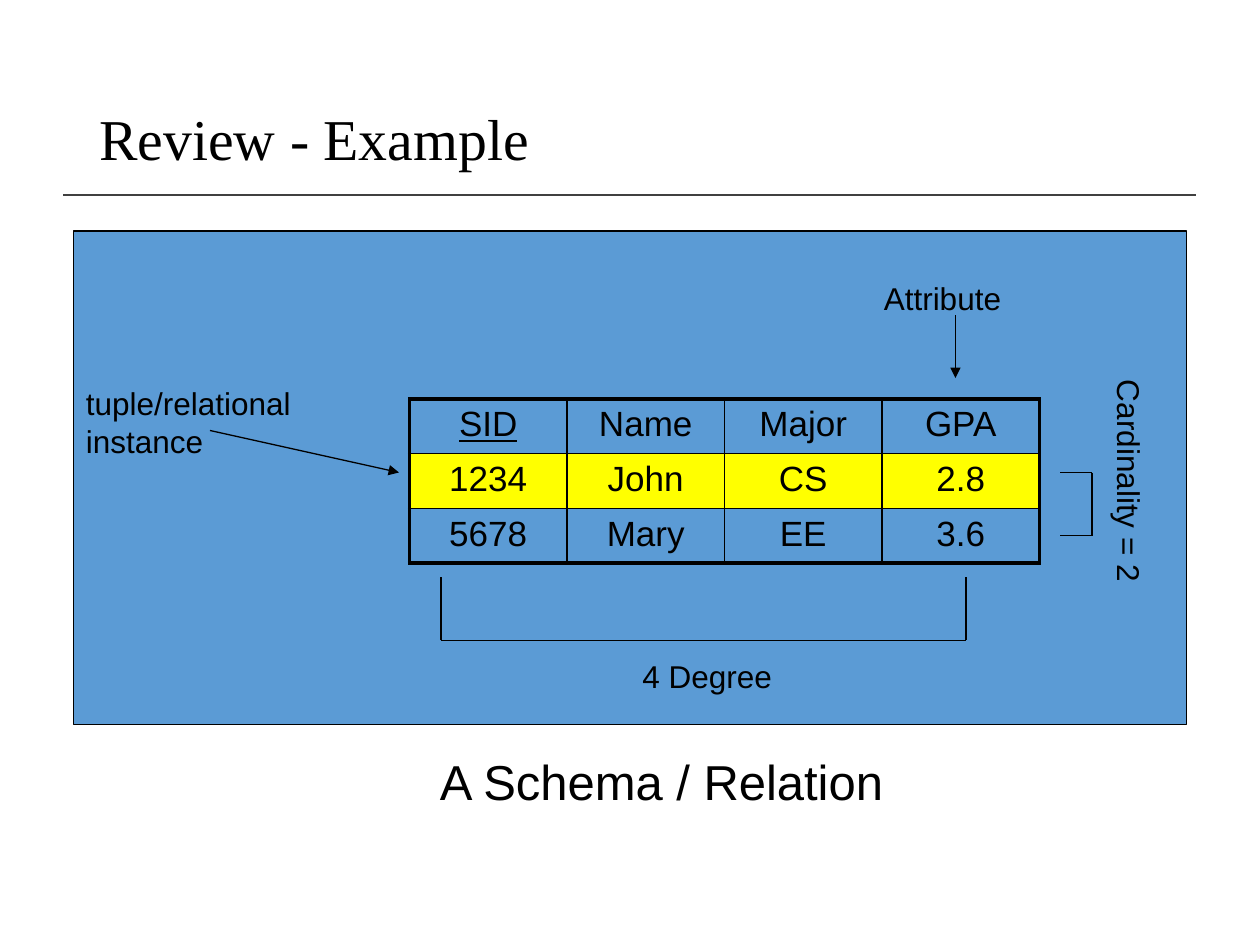
from dataclasses import dataclass

import lxml.etree
import pptx
import pptx.dml.color
import pptx.enum.shapes
import pptx.enum.text
import pptx.oxml.ns
import pptx.util

# The slide is a grid of 120 columns by 90 rows, twelve to the inch.
GRID_PER_INCH = 12
BLACK, BLUE, YELLOW, GRAY = "000000", "5B9BD5", "FFFF00", "404040"
ALIGN = pptx.enum.text.PP_ALIGN
ANCHOR = pptx.enum.text.MSO_ANCHOR


@dataclass(frozen=True)
class Box:
    column: float
    row: float
    columns: float
    rows: float

    def lengths(self) -> list[int]:
        return [grid(n) for n in (self.column, self.row, self.columns, self.rows)]


@dataclass(frozen=True)
class Label:
    text: str
    box: Box
    size: float = 18
    align: ALIGN = ALIGN.LEFT
    direction: str = "horz"


@dataclass(frozen=True)
class Path:
    """A chain of straight lines through grid points."""
    points: tuple
    arrow: bool = False
    color: str = BLACK
    width: float = 0.75


def grid(count: float) -> int:
    return pptx.util.Inches(count / GRID_PER_INCH)


def rgb(color: str) -> pptx.dml.color.RGBColor:
    return pptx.dml.color.RGBColor.from_string(color)


def add_element(parent, tag: str, **attributes: str):
    return lxml.etree.SubElement(parent, pptx.oxml.ns.qn(tag), attributes)


def write_text(frame, text: str, *, size: float, font: str = "Arial",
               align: ALIGN = ALIGN.LEFT, underline: bool = False,
               line_spacing: float = 1.0) -> None:
    paragraph = frame.paragraphs[0]
    paragraph.alignment = align
    paragraph.line_spacing = line_spacing
    run = paragraph.add_run()
    run.text = text
    run.font.name = font
    run.font.size = pptx.util.Pt(size)
    run.font.underline = underline
    run.font.color.rgb = rgb(BLACK)


def draw_title(slide, text: str, box: Box) -> None:
    frame = slide.shapes.add_textbox(*box.lengths()).text_frame
    frame.word_wrap = True
    frame.vertical_anchor = ANCHOR.MIDDLE
    write_text(frame, text, size=33, font="Times New Roman", line_spacing=0.9)


def draw_label(slide, label: Label) -> None:
    frame = slide.shapes.add_textbox(*label.box.lengths()).text_frame
    frame.word_wrap = True
    frame.auto_size = pptx.enum.text.MSO_AUTO_SIZE.SHAPE_TO_FIT_TEXT
    frame._txBody.bodyPr.set("vert", label.direction)
    write_text(frame, label.text, size=label.size, align=label.align)


def draw_panel(slide, box: Box) -> None:
    panel = slide.shapes.add_shape(
        pptx.enum.shapes.MSO_SHAPE.RECTANGLE, *box.lengths())
    panel.shadow.inherit = False
    panel.fill.solid()
    panel.fill.fore_color.rgb = rgb(BLUE)
    panel.line.color.rgb = rgb(BLACK)
    panel.line.width = pptx.util.Pt(0.75)


def draw_path(slide, path: Path) -> None:
    for start, end in zip(path.points, path.points[1:]):
        connector = slide.shapes.add_connector(
            pptx.enum.shapes.MSO_CONNECTOR.STRAIGHT,
            *(grid(n) for n in (*start, *end)))
        connector.line.color.rgb = rgb(path.color)
        connector.line.width = pptx.util.Pt(path.width)
        if path.arrow:
            add_element(connector.line._get_or_add_ln(), "a:tailEnd", type="triangle")
        add_element(connector._element.spPr, "a:effectLst")


def draw_border(cell, side: str, width: float) -> None:
    line = add_element(cell._tc.get_or_add_tcPr(), f"a:ln{side}",
                       w=str(pptx.util.Pt(width)))
    add_element(add_element(line, "a:solidFill"), "a:srgbClr", val=BLACK)


def draw_relation(slide, rows: list[list[str]], box: Box) -> None:
    row_count, column_count = len(rows), len(rows[0])
    table = slide.shapes.add_table(row_count, column_count, *box.lengths()).table
    table.first_row = table.horz_banding = False
    for r, values in enumerate(rows):
        for c, value in enumerate(values):
            cell = table.cell(r, c)
            # Thick outer frame, thin inner lines
            outer = {"L": c == 0, "R": c == column_count - 1,
                     "T": r == 0, "B": r == row_count - 1}
            for side, is_outer in outer.items():
                draw_border(cell, side, 2.25 if is_outer else 1)
            # The sample tuple is highlighted
            if r == 1:
                cell.fill.solid()
                cell.fill.fore_color.rgb = rgb(YELLOW)
            else:
                cell.fill.background()
            # The key attribute is underlined
            write_text(cell.text_frame, value, size=20, align=ALIGN.CENTER,
                       underline=value == "SID")


RELATION = [
    ["SID", "Name", "Major", "GPA"],
    ["1234", "John", "CS", "2.8"],
    ["5678", "Mary", "EE", "3.6"],
]
TITLE_RULE = Path(((6, 18.6), (113.9, 18.6)), color=GRAY, width=1)
PATHS = [
    Path(((20, 41), (38, 45)), arrow=True),               # tuple
    Path(((91, 30), (91, 36)), arrow=True),               # attribute
    Path(((42, 55), (42, 61), (92, 61), (92, 55))),       # degree bracket
    Path(((101, 45), (104, 45), (104, 51), (101, 51))),   # cardinality bracket
]
LABELS = [
    Label("tuple/relational instance", Box(7, 36, 25, 8.4)),
    Label("Attribute", Box(83, 26, 19, 4.8)),
    Label("4 Degree", Box(60, 62, 17, 4.8)),
    Label("Cardinality = 2", Box(104, 35, 6, 31), direction="eaVert"),
    Label("A Schema / Relation", Box(38, 71, 50, 6.8), size=28, align=ALIGN.CENTER),
]


def main() -> None:
    presentation = pptx.Presentation()
    presentation.slide_width = grid(120)
    presentation.slide_height = grid(90)
    slide = presentation.slides.add_slide(presentation.slide_layouts[6])

    # Heading
    draw_path(slide, TITLE_RULE)
    draw_title(slide, "Review - Example", Box(8.3, 4.8, 103.4, 17.4))

    # Relation on its panel
    draw_panel(slide, Box(7, 22, 106, 47))
    draw_relation(slide, RELATION, Box(39, 38, 60, 14.8))

    # Annotations
    for path in PATHS:
        draw_path(slide, path)
    for label in LABELS:
        draw_label(slide, label)

    presentation.save("out.pptx")


if __name__ == "__main__":
    main()
